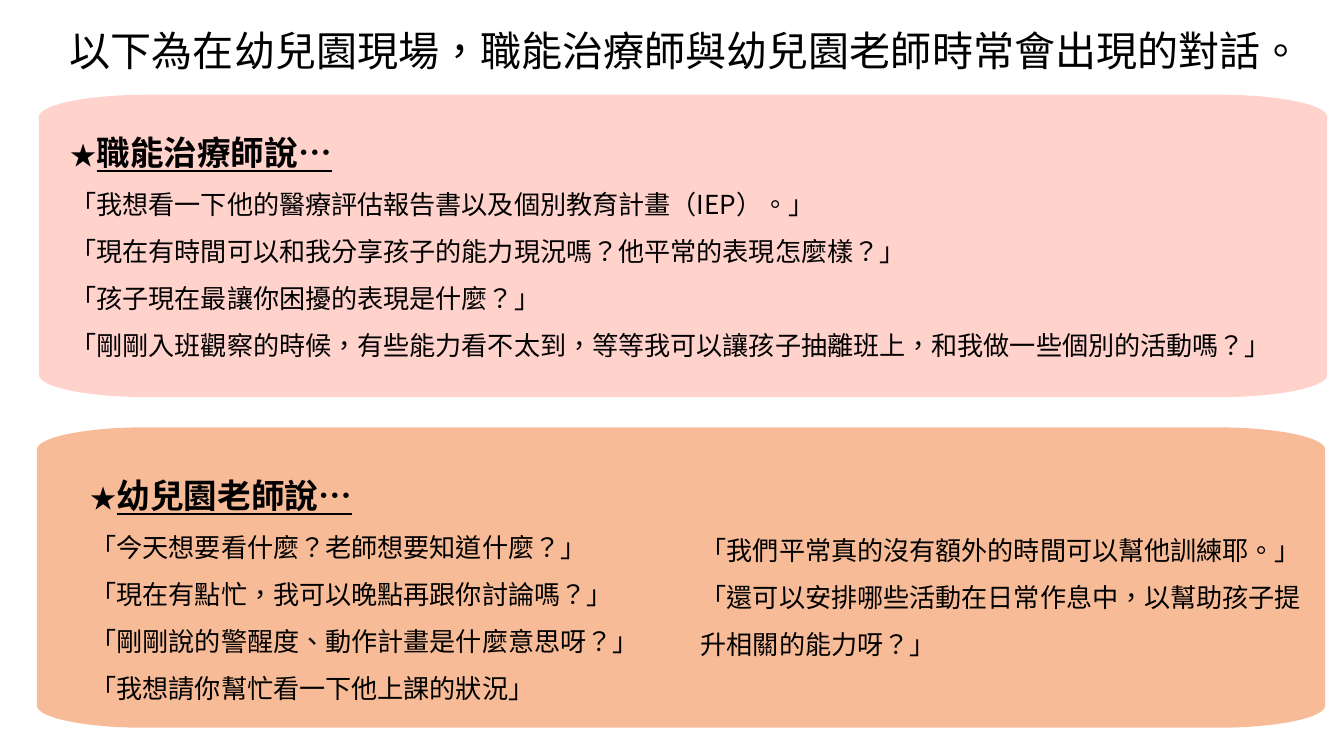
from lxml import etree
from pptx import Presentation
from pptx.dml.color import RGBColor
from pptx.enum.text import MSO_AUTO_SIZE
from pptx.oxml.ns import qn
from pptx.util import Inches, Pt

GROW = MSO_AUTO_SIZE.SHAPE_TO_FIT_TEXT
FONT = "Noto Sans CJK SC"
LANGUAGE = "zh-TW"
COLORS = {"text": "000000", "therapist": "FFD2CC", "teacher": "F7BB97"}
TITLE_SIZE, HEADING_SIZE, BODY_SIZE = 44, 36, 28
LINE_HEIGHT = 1.2
BODY_SPACING = 1.5
CORNER_WIDTH, CORNER_HEIGHT, CORNER_PULL = 1.6, 0.33, 0.55

TITLE = "以下為在幼兒園現場，職能治療師與幼兒園老師時常會出現的對話。"
TITLE_BOX = (0.94, 0.33, 18.46, 0.84)

PANELS = [
    {"color": "therapist", "box": (0.58, 1.41, 19.17, 4.5), "columns": [
        {"box": (0.95, 1.62, 18.42, 3.75), "heading": "職能治療師說…", "lines": [
            "「我想看一下他的醫療評估報告書以及個別教育計畫（IEP）。」",
            "「現在有時間可以和我分享孩子的能力現況嗎？他平常的表現怎麼樣？」",
            "「孩子現在最讓你困擾的表現是什麼？」",
            "「剛剛入班觀察的時候，有些能力看不太到，等等我可以讓孩子抽離班上，和我做一些個別的活動嗎？」",
        ]},
    ]},
    {"color": "teacher", "box": (0.55, 6.36, 19.17, 4.47), "columns": [
        {"box": (1.25, 6.72, 19.17, 3.75), "heading": "幼兒園老師說…", "lines": [
            "「今天想要看什麼？老師想要知道什麼？」",
            "「現在有點忙，我可以晚點再跟你討論嗎？」",
            "「剛剛說的警醒度、動作計畫是什麼意思呀？」",
            "「我想請你幫忙看一下他上課的狀況」",
        ]},
        {"box": (10.33, 7.67, 9.45, 2.14), "heading": None, "lines": [
            "「我們平常真的沒有額外的時間可以幫他訓練耶。」",
            "「還可以安排哪些活動在日常作息中，以幫助孩子提升相關的能力呀？」",
        ]},
    ]},
]


def round_corners(shape):
    path = next(shape._element.iter(qn("a:path")))
    segments = [child for child in path if child.tag != qn("a:close")]
    points = [(int(segment[0].get("x")), int(segment[0].get("y"))) for segment in segments]
    for index in range(2, len(points), 2):
        start, end = points[index - 1], points[index]
        corner = (end[0], start[1]) if index % 4 == 2 else (start[0], end[1])
        curve = etree.Element(qn("a:cubicBezTo"))
        for point, pull in ((start, CORNER_PULL), (end, CORNER_PULL), (end, 0)):
            x, y = (round(p + (c - p) * pull) for p, c in zip(point, corner))
            etree.SubElement(curve, qn("a:pt"), x=str(x), y=str(y))
        path.replace(segments[index], curve)


def add_panel(slide, box, color):
    left, top, width, height = box
    right, bottom = left + width, top + height
    inner_left, inner_right = left + CORNER_WIDTH, right - CORNER_WIDTH
    inner_top, inner_bottom = top + CORNER_HEIGHT, bottom - CORNER_HEIGHT
    outline = [
        (inner_left, top), (inner_right, top),
        (right, inner_top), (right, inner_bottom),
        (inner_right, bottom), (inner_left, bottom),
        (left, inner_bottom), (left, inner_top),
        (inner_left, top),
    ]
    points = [(Inches(x), Inches(y)) for x, y in outline]
    builder = slide.shapes.build_freeform(*points[0])
    builder.add_line_segments(points[1:], close=True)
    shape = builder.convert_to_shape()
    round_corners(shape)
    shape.shadow.inherit = False
    shape.fill.solid()
    shape.fill.fore_color.rgb = RGBColor.from_string(COLORS[color])
    shape.line.fill.background()


def format_run(run, size, heading=False):
    run.font.size = Pt(size)
    run.font.bold = heading
    run.font.underline = heading
    run.font.color.rgb = RGBColor.from_string(COLORS["text"])
    run.font.name = FONT
    properties = run._r.get_or_add_rPr()
    properties.set("lang", LANGUAGE)
    etree.SubElement(properties, qn("a:ea")).set("typeface", FONT)


def add_text(slide, box, lines, size, spacing, heading=None):
    text_box = slide.shapes.add_textbox(*map(Inches, box))
    text_frame = text_box.text_frame
    text_frame.word_wrap = True
    text_frame.auto_size = GROW
    text_frame.text = "\n".join((["★"] if heading else []) + lines)
    for paragraph in text_frame.paragraphs:
        paragraph.line_spacing = Pt(size * LINE_HEIGHT * spacing)
        format_run(paragraph.runs[0], size)
    if heading:
        paragraph = text_frame.paragraphs[0]
        paragraph.line_spacing = Pt(HEADING_SIZE * LINE_HEIGHT * spacing)
        run = paragraph.add_run()
        run.text = heading
        format_run(run, HEADING_SIZE, heading=True)


def main():
    presentation = Presentation()
    presentation.slide_width = Inches(20)
    presentation.slide_height = Inches(11.25)
    slide = presentation.slides.add_slide(presentation.slide_layouts[6])
    add_text(slide, TITLE_BOX, [TITLE], TITLE_SIZE, 1)
    for panel in PANELS:
        add_panel(slide, panel["box"], panel["color"])
        for column in panel["columns"]:
            add_text(slide, column["box"], column["lines"], BODY_SIZE,
                     BODY_SPACING, column["heading"])
    presentation.save("out.pptx")


if __name__ == "__main__":
    main()
